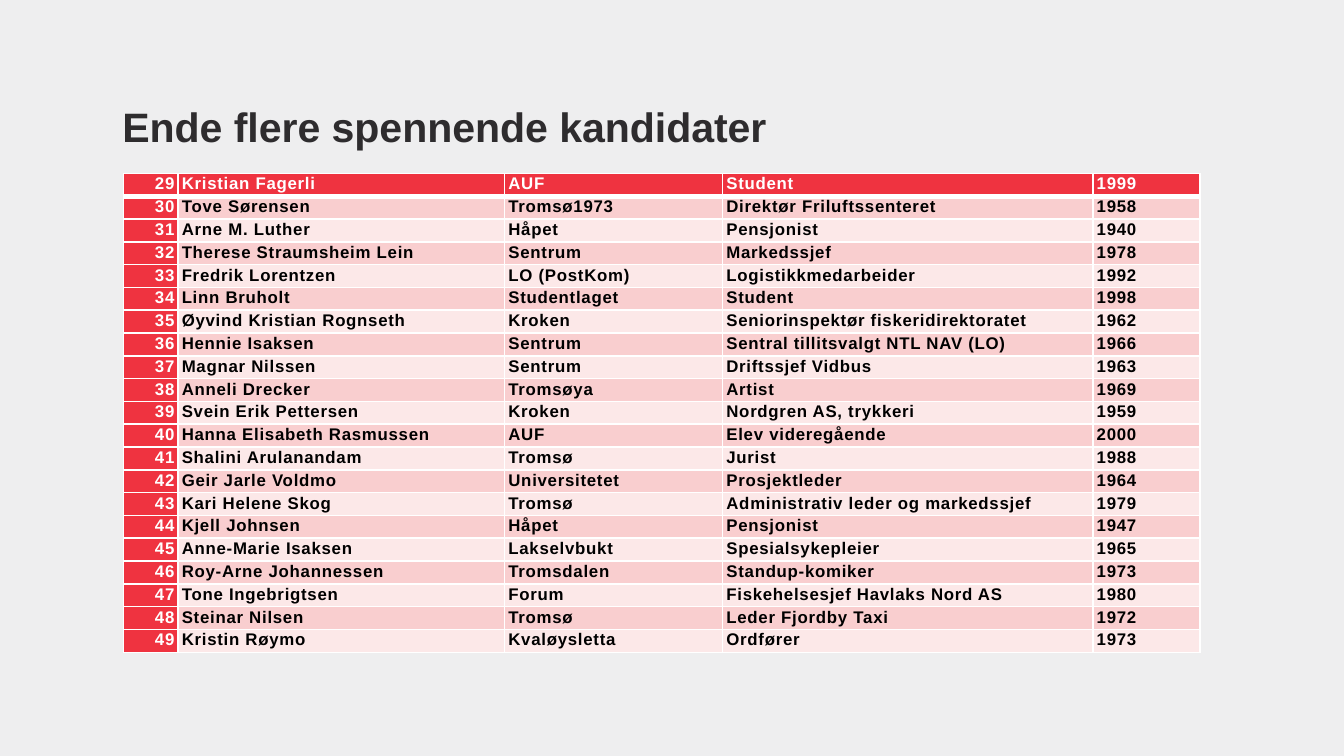
import pptx
import pptx.dml.color
import pptx.enum.shapes
import pptx.enum.text
import pptx.oxml
import pptx.oxml.ns
import pptx.util
from lxml import etree

Pt = pptx.util.Pt
RGB = pptx.dml.color.RGBColor.from_string
ALIGN = pptx.enum.text.PP_ALIGN

COLOURS = {
    "background": "EEEEEF",
    "title": "2E2C2E",
    "red": "EF3340",
    "dark_band": "F9CECF",
    "light_band": "FCE8E8",
    "white": "FFFFFF",
    "black": "000000",
}

CANDIDATES = [
    ("Kristian Fagerli", "AUF", "Student", 1999),
    ("Tove Sørensen", "Tromsø1973", "Direktør Friluftssenteret", 1958),
    ("Arne M. Luther", "Håpet", "Pensjonist", 1940),
    ("Therese Straumsheim Lein", "Sentrum", "Markedssjef", 1978),
    ("Fredrik Lorentzen", "LO (PostKom)", "Logistikkmedarbeider", 1992),
    ("Linn Bruholt", "Studentlaget", "Student", 1998),
    ("Øyvind Kristian Rognseth", "Kroken", "Seniorinspektør fiskeridirektoratet", 1962),
    ("Hennie Isaksen", "Sentrum", "Sentral tillitsvalgt NTL NAV (LO)", 1966),
    ("Magnar Nilssen", "Sentrum", "Driftssjef Vidbus", 1963),
    ("Anneli Drecker", "Tromsøya", "Artist", 1969),
    ("Svein Erik Pettersen", "Kroken", "Nordgren AS, trykkeri", 1959),
    ("Hanna Elisabeth Rasmussen", "AUF", "Elev videregående", 2000),
    ("Shalini Arulanandam", "Tromsø", "Jurist", 1988),
    ("Geir Jarle Voldmo", "Universitetet", "Prosjektleder", 1964),
    ("Kari Helene Skog", "Tromsø", "Administrativ leder og markedssjef", 1979),
    ("Kjell Johnsen", "Håpet", "Pensjonist", 1947),
    ("Anne-Marie Isaksen", "Lakselvbukt", "Spesialsykepleier", 1965),
    ("Roy-Arne Johannessen", "Tromsdalen", "Standup-komiker", 1973),
    ("Tone Ingebrigtsen", "Forum", "Fiskehelsesjef Havlaks Nord AS", 1980),
    ("Steinar Nilsen", "Tromsø", "Leder Fjordby Taxi", 1972),
    ("Kristin Røymo", "Kvaløysletta", "Ordfører", 1973),
]
FIRST_NUMBER = 29
COLUMN_WIDTHS = [29.2, 175, 116.8, 198.4, 57.2]
ROW_HEIGHT = 12.24


def write(frame, text, size, colour, align=ALIGN.LEFT, line=1.0, after=0, tracking=0):
    """Fill the first paragraph of a text frame with bold Arial."""
    para = frame.paragraphs[0]
    para.alignment = align
    para.line_spacing = line
    para.space_before = Pt(0)
    para.space_after = Pt(after)
    span = para.add_run()
    span.text = text
    span.font.name = "Arial"
    span.font.size = Pt(size)
    span.font.bold = True
    span.font.color.rgb = RGB(COLOURS[colour])
    if tracking:
        span.font._element.set("spc", str(round(tracking * 100)))


def add_borders(cell, bottom):
    """Draw white cell borders; they must come before the fill in the XML."""
    properties = cell._tc.get_or_add_tcPr()
    widths = {"lnL": 1, "lnR": 1, "lnT": 1, "lnB": bottom}
    for side, width in widths.items():
        border = etree.SubElement(properties, pptx.oxml.ns.qn(f"a:{side}"), w=str(Pt(width)))
        fill = etree.SubElement(border, pptx.oxml.ns.qn("a:solidFill"))
        etree.SubElement(fill, pptx.oxml.ns.qn("a:srgbClr"), val=COLOURS["white"])


deck = pptx.Presentation()
deck.slide_width = Pt(720)
deck.slide_height = Pt(405)
page = deck.slides.add_slide(deck.slide_layouts[6])

backdrop = page.shapes.add_shape(
    pptx.enum.shapes.MSO_SHAPE.RECTANGLE, 0, 0, deck.slide_width, deck.slide_height)
backdrop.shadow.inherit = False
backdrop.fill.solid()
backdrop.fill.fore_color.rgb = RGB(COLOURS["background"])
backdrop.line.fill.background()

title = page.shapes.add_textbox(Pt(65.5), Pt(52), Pt(589), Pt(54.7)).text_frame
title.word_wrap = True
title.margin_left = title.margin_right = title.margin_top = title.margin_bottom = 0
write(title, "Ende flere spennende kandidater", 22, "title", line=1.1)

table = page.shapes.add_table(
    len(CANDIDATES), len(COLUMN_WIDTHS), Pt(66.2), Pt(92.9),
    Pt(sum(COLUMN_WIDTHS)), Pt(ROW_HEIGHT * len(CANDIDATES))).table
table.first_col = True
for column, width in zip(table.columns, COLUMN_WIDTHS):
    column.width = Pt(width)

for row, candidate in enumerate(CANDIDATES):
    table.rows[row].height = Pt(ROW_HEIGHT)
    band = "dark_band" if row % 2 else "light_band"
    for column, value in enumerate((FIRST_NUMBER + row, *candidate)):
        cell = table.cell(row, column)
        is_header = row == 0 or column == 0
        cell.margin_left = cell.margin_right = Pt(2)
        cell.margin_top = cell.margin_bottom = 0
        add_borders(cell, bottom=3 if row == 0 else 1)
        cell.fill.solid()
        cell.fill.fore_color.rgb = RGB(COLOURS["red" if is_header else band])
        write(cell.text_frame, str(value), 9, "white" if is_header else "black",
              align=ALIGN.RIGHT if column == 0 else ALIGN.LEFT,
              line=1.07, after=8, tracking=0.4)

deck.save("out.pptx")
